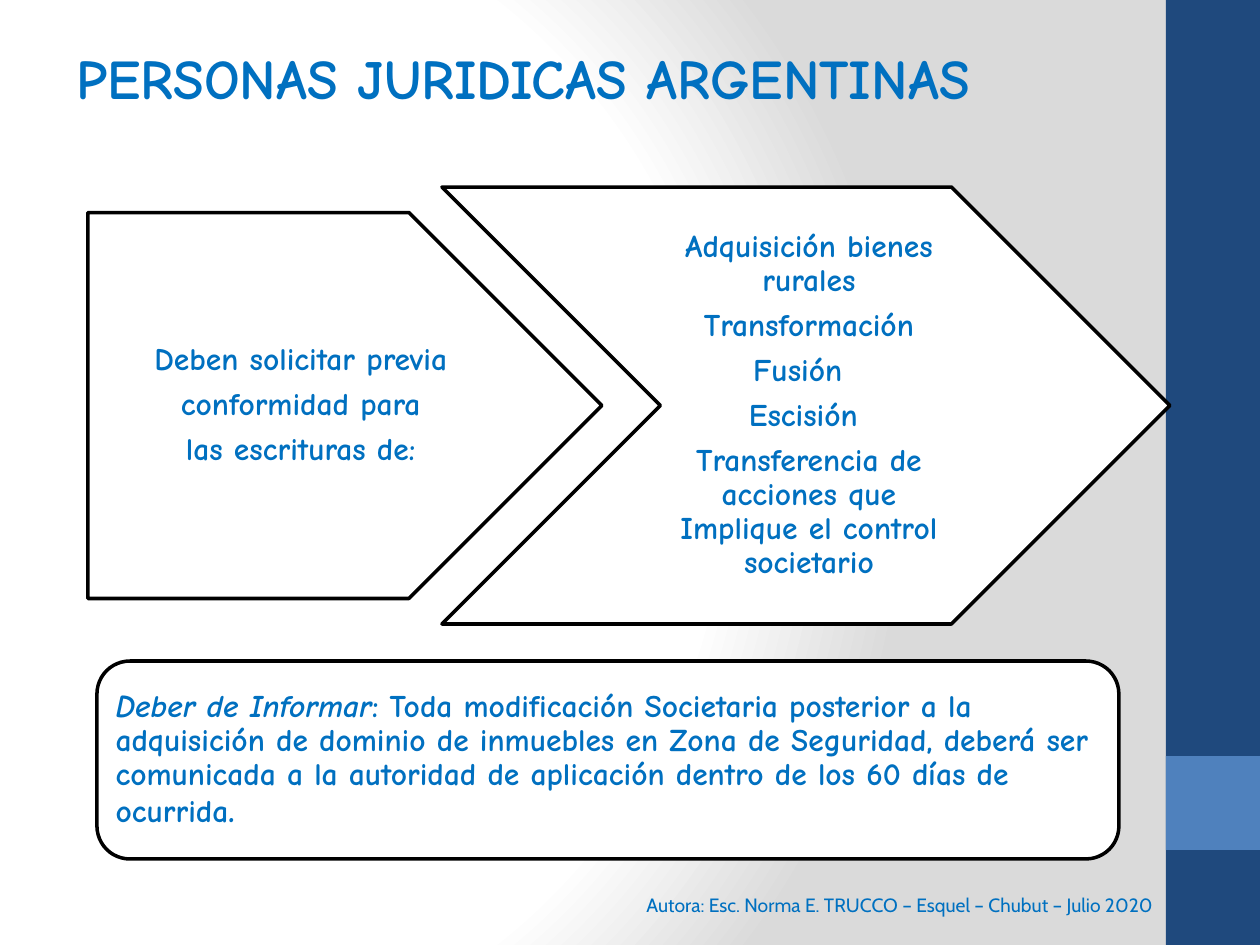
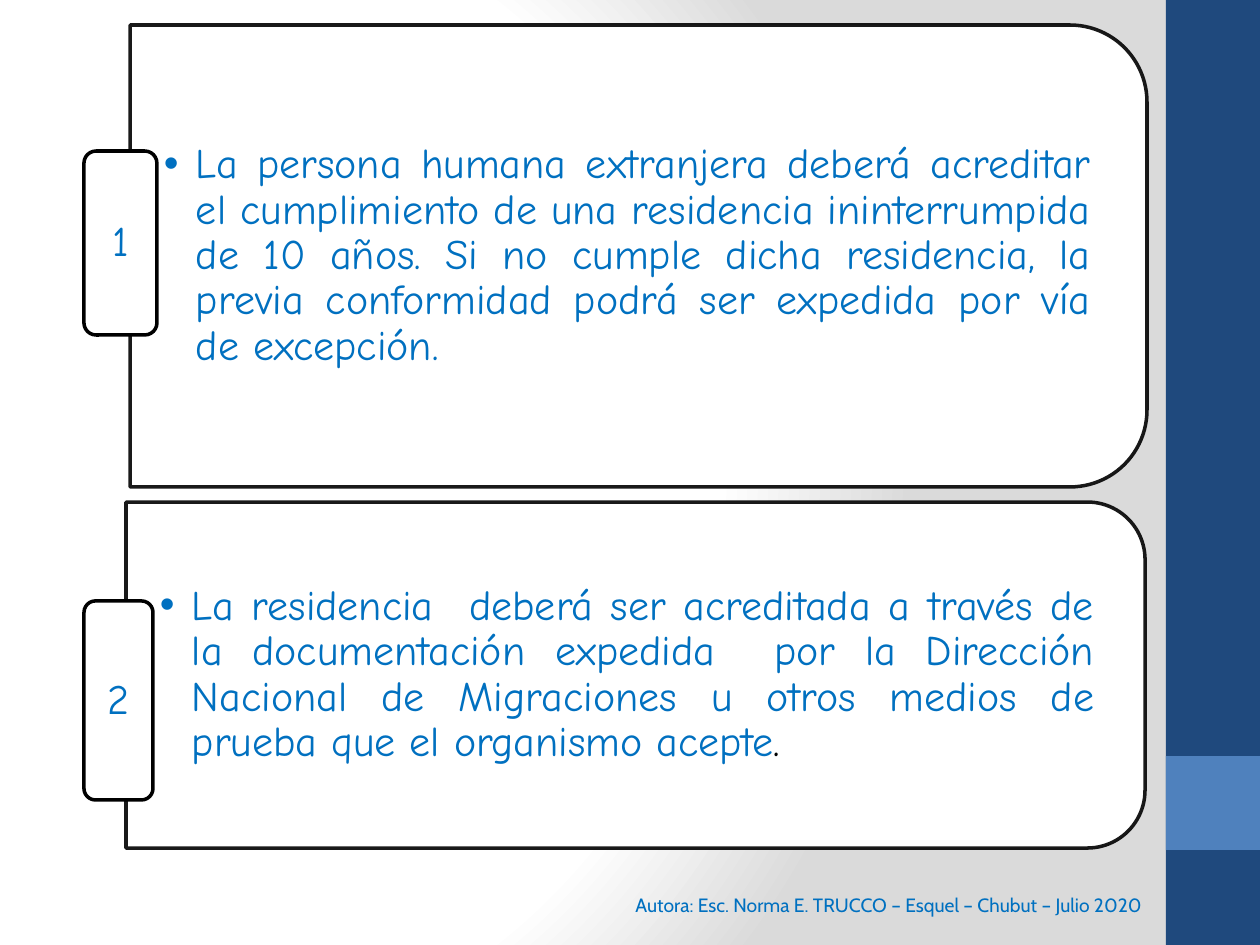
import pptx
import pptx.dml.color
import pptx.enum.shapes
import pptx.enum.text
import pptx.oxml
import pptx.oxml.ns
import pptx.util

SHAPE = pptx.enum.shapes.MSO_SHAPE
ALIGN = pptx.enum.text.PP_ALIGN
ANCHOR = pptx.enum.text.MSO_ANCHOR
NO_FIT = pptx.enum.text.MSO_AUTO_SIZE.NONE
qn = pptx.oxml.ns.qn
NS = pptx.oxml.ns.nsdecls("a", "p")

PX_PER_INCH = 126
SLIDE_W, SLIDE_H = 1260, 945
NAVY, STEEL, BLUE, OLIVE = "1F497D", "4F81BD", "0070C0", "4F6228"
WHITE, GREY, BLACK = "FFFFFF", "DADADA", "000000"
HAND, SANS = "Comic Neue", "Cabin"
BAND_LEFT = 1166
FOOTER = "Autora: Esc. Norma E. TRUCCO – Esquel – Chubut – Julio 2020"

BOLD_18 = {"name": HAND, "size": pptx.util.Pt(18), "bold": True}
PLAIN_24 = {"name": HAND, "size": pptx.util.Pt(24), "bold": False}
TITLE_32 = {"name": HAND, "size": pptx.util.Pt(32), "bold": True}
FOOTER_11 = {"name": SANS, "size": pptx.util.Pt(11)}


def px(length):
    return pptx.util.Emu(round(length * 914400 / PX_PER_INCH))


def rgb(hex_color):
    return pptx.dml.color.RGBColor.from_string(hex_color)


def apply(target, values):
    for name, value in values.items():
        setattr(target, name, value)


def place(shape, box):
    apply(shape, dict(zip(("left", "top", "width", "height"), map(px, box))))


def add_block(slide, kind, box, fill, line=None):
    block = slide.shapes.add_shape(kind, *map(px, box))
    block.shadow.inherit = False
    block.fill.solid()
    block.fill.fore_color.rgb = rgb(fill)
    if line:
        block.line.color.rgb = rgb(line)
        block.line.width = pptx.util.Pt(2)
    else:
        block.line.fill.background()
    return block


def write(shape, paragraphs, font, align, anchor=ANCHOR.MIDDLE, insets=None, spacing=None):
    """Each paragraph is a list of (text, font overrides) runs."""
    frame = shape.text_frame
    apply(frame, {"word_wrap": True, "auto_size": NO_FIT, "vertical_anchor": anchor})
    if insets:
        sides = ("margin_left", "margin_top", "margin_right", "margin_bottom")
        apply(frame, dict(zip(sides, map(px, insets))))
    for index, runs in enumerate(paragraphs):
        paragraph = frame.add_paragraph() if index else frame.paragraphs[0]
        apply(paragraph, {"alignment": align, "space_before": 0, **(spacing or {})})
        for text, overrides in runs:
            run = paragraph.add_run()
            run.text = text
            values = {**font, **overrides}
            run.font.color.rgb = rgb(values.pop("color", BLUE))
            apply(run.font, values)


def tight(points_after):
    return {"line_spacing": 0.9, "space_after": pptx.util.Pt(points_after)}


def lines(*texts):
    return [[(text, {})] for text in texts]


# Shared master: gradient background and right-hand band
def dress_master(master, slide):
    common = master.element.find(qn("p:cSld"))
    common.remove(common.find(qn("p:bg")))
    stops = "".join(
        f'<a:gs pos="{pos}000"><a:srgbClr val="{color}"/></a:gs>'
        for pos, color in ((0, WHITE), (75, WHITE), (100, GREY)))
    common.insert(0, pptx.oxml.parse_xml(
        f'<p:bg {NS}><p:bgPr><a:gradFill rotWithShape="1"><a:gsLst>{stops}</a:gsLst>'
        '<a:path path="circle"><a:fillToRect l="20000" t="50000" r="100000" b="50000"/>'
        '</a:path></a:gradFill><a:effectLst/></p:bgPr></p:bg>'))
    band_w = SLIDE_W - BAND_LEFT
    for depth, (top, height, color) in enumerate(((0, SLIDE_H, NAVY), (756, band_w, STEEL))):
        band = add_block(slide, SHAPE.RECTANGLE, (BAND_LEFT, top, band_w, height), color)
        master.shapes.element.insert(2 + depth, band.element)


def add_footer(slide, right):
    width = 740
    credit = slide.shapes.add_textbox(*map(px, (right - width, 880, width, 50)))
    write(credit, lines(FOOTER), FOOTER_11, ALIGN.RIGHT)


# Slide 1: title, two arrows and the note below
def add_title(slide, box):
    title = slide.shapes.title
    place(title, box)
    write(title, lines("PERSONAS JURIDICAS ARGENTINAS"), TITLE_32, ALIGN.JUSTIFY, ANCHOR.TOP)
    title.text_frame.paragraphs[0].runs[0].font._element.insert(0, pptx.oxml.parse_xml(
        f'<a:ln {NS} w="12700"><a:solidFill><a:srgbClr val="{OLIVE}"/></a:solidFill></a:ln>'))


def add_arrows(slide, box):
    left, top, width, height = box
    request_h = 386
    request_box = (left, top + (height - request_h) / 2, 514, request_h)
    deeds_box = (left + 354, top, width - 354, height)
    request = add_block(slide, SHAPE.PENTAGON, request_box, WHITE, BLACK)
    write(request, lines("Deben solicitar previa", " conformidad para ", "las escrituras de:"),
          BOLD_18, ALIGN.CENTER, insets=(12, 6, 4, 6), spacing=tight(6.3))
    deeds = add_block(slide, SHAPE.CHEVRON, deeds_box, WHITE, BLACK)
    write(deeds, lines("Adquisición bienes rurales", "Transformación", "Fusión  ", "Escisión ",
                       "Transferencia de acciones que Implique el control societario"),
          BOLD_18, ALIGN.CENTER, insets=(10, 6, 4, 6), spacing=tight(6.3))


def add_duty_note(slide, box):
    note = add_block(slide, SHAPE.ROUNDED_RECTANGLE, box, WHITE, BLACK)
    duty = [("Deber de Informar", {"italic": True}),
            (": Toda modificación Societaria posterior a la adquisición de dominio de inmuebles "
             "en Zona de Seguridad, deberá ser comunicada a la autoridad de aplicación dentro "
             "de los 60 días de ocurrida", {}),
            (".", {"size": pptx.util.Pt(20)})]
    write(note, [duty], BOLD_18, ALIGN.LEFT, insets=(9, 9, 9, 9), spacing=tight(6.3))


def build_companies(slide):
    add_footer(slide, 1166)
    add_title(slide, (64, 37, 1131, 81))
    add_arrows(slide, (88, 187, 1082, 437))
    add_duty_note(slide, (97, 661, 1022, 198))


# Slide 2: numbered panels, rounded on the right
def add_requirement(slide, body, box, number, tag_box, runs):
    left, top, width, height = box
    # The outline is drawn upright and turned a quarter about its centre
    upright = (left + (width - height) / 2, top + (height - width) / 2, height, width)
    panel = add_block(slide, SHAPE.ROUND_2_SAME_RECTANGLE, upright, WHITE, BLACK)
    panel.rotation = 90
    line_color = panel.line._ln.find(".//" + qn("a:srgbClr"))
    line_color.append(pptx.oxml.parse_xml(f'<a:alpha {NS} val="90000"/>'))

    # Bulleted text stays clear of the rounded corners
    corner = height / 6 * 0.29
    place(body, (left, top + corner, width - corner, height - 2 * corner))
    write(body, [runs], PLAIN_24, ALIGN.JUSTIFY, insets=(34, 18, 34, 18),
          spacing={"level": 1, **tight(3.6)})
    properties = body.text_frame.paragraphs[0]._p.get_or_add_pPr()
    properties.set("marL", str(px(32)))
    properties.set("indent", str(px(-32)))
    properties.append(pptx.oxml.parse_xml(f'<a:buChar {NS} char="•"/>'))
    slide.shapes.element.append(body.element)

    # Number tag over the left edge
    tag_left, tag_top, tag_w, tag_h = tag_box
    tag = add_block(slide, SHAPE.ROUNDED_RECTANGLE,
                    (left + tag_left, top + tag_top, tag_w, tag_h), WHITE, BLACK)
    write(tag, lines(str(number)), PLAIN_24, ALIGN.CENTER, spacing=tight(8.4))


def build_residency(slide):
    add_footer(slide, 1155)
    title, first, second = list(slide.placeholders)
    title.element.getparent().remove(title.element)
    add_requirement(slide, first, (130, 25, 1017, 462), 1, (-46, 126, 73, 184), [
        ("La persona humana extranjera deberá acreditar el cumplimiento de una residencia "
         "ininterrumpida de 10 años. Si no cumple dicha residencia, la previa conformidad "
         "podrá ser expedida por vía de excepción.", {})])
    add_requirement(slide, second, (126, 502, 1019, 346), 2, (-42, 99, 69, 199), [
        ("La residencia  deberá ser acreditada a través de la documentación expedida  por la "
         "Dirección Nacional de Migraciones u otros medios de prueba que el organismo acepte", {}),
        (". ", {"color": BLACK})])


def main():
    deck = pptx.Presentation()
    apply(deck, {"slide_width": px(SLIDE_W), "slide_height": px(SLIDE_H)})
    companies = deck.slides.add_slide(deck.slide_layouts.get_by_name("Title Only"))
    residency = deck.slides.add_slide(deck.slide_layouts.get_by_name("Two Content"))
    dress_master(deck.slide_master, companies)
    build_companies(companies)
    build_residency(residency)
    deck.save("out.pptx")


if __name__ == "__main__":
    main()
